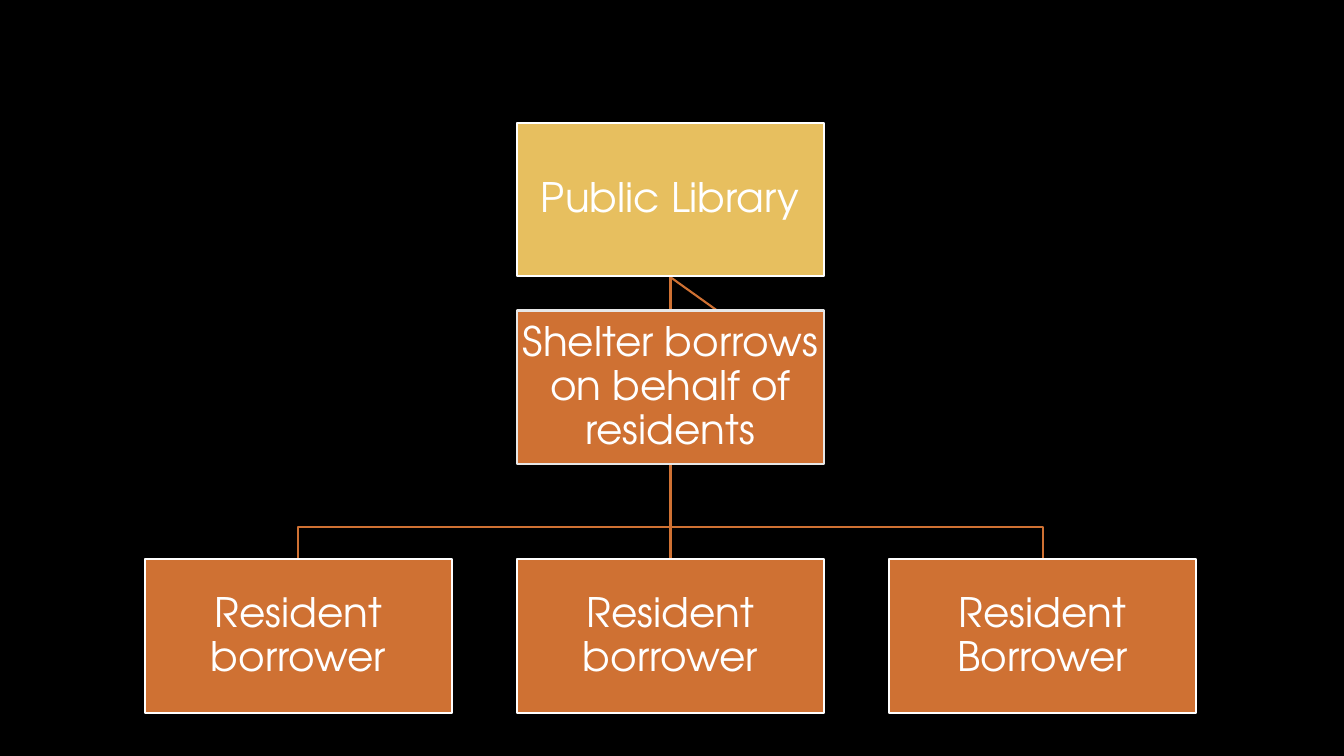
from lxml import etree
from pptx import Presentation
from pptx import util as u
from pptx.dml.color import RGBColor
from pptx.enum import shapes, text
from pptx.oxml.ns import qn

BLACK = RGBColor(0x00, 0x00, 0x00)
WHITE = RGBColor(0xFF, 0xFF, 0xFF)
PALE_GREY = RGBColor(0xE7, 0xE7, 0xE7)
GOLD = RGBColor(0xE7, 0xBF, 0x5F)
ORANGE = RGBColor(0xCF, 0x71, 0x33)

BOX_WIDTH, BOX_HEIGHT = 3.05, 1.52
CENTRE, COLUMN_STEP = 6.65, 3.69
LIBRARY_TOP, SHELTER_TOP, RESIDENT_TOP = 1.22, 3.08, 5.55
TRUNK_TOP, BRANCH_LEVEL = 2.75, 5.23


class LendingChart:
    """Draws the boxes and lines of an organisation chart on one slide."""

    font = "TeX Gyre Adventor"
    size = u.Pt(29)
    line_width = u.Pt(1.5)
    inset = u.Inches(0.02)

    def __init__(self, slide):
        self.slide = slide
        slide.background.fill.solid()
        slide.background.fill.fore_color.rgb = BLACK

    def outline(self, item, color):
        item.line.color.rgb = color
        item.line.width = self.line_width

    def straight(self, start, end):
        points = [u.Inches(value) for value in (*start, *end)]
        line = self.slide.shapes.add_connector(shapes.MSO_CONNECTOR.STRAIGHT, *points)
        self.outline(line, ORANGE)
        etree.SubElement(line._element.spPr, qn("a:effectLst"))

    def bent(self, *points):
        start, *rest = [(u.Inches(x), u.Inches(y)) for x, y in points]
        builder = self.slide.shapes.build_freeform(*start)
        builder.add_line_segments(rest, close=False)
        line = builder.convert_to_shape()
        line.fill.background()
        line.shadow.inherit = False
        self.outline(line, ORANGE)

    def box(self, label, centre, top, fill=ORANGE, border=WHITE):
        box = self.slide.shapes.add_shape(
            shapes.MSO_SHAPE.RECTANGLE,
            u.Inches(centre - BOX_WIDTH / 2), u.Inches(top),
            u.Inches(BOX_WIDTH), u.Inches(BOX_HEIGHT))
        box.shadow.inherit = False
        box.fill.solid()
        box.fill.fore_color.rgb = fill
        self.outline(box, border)
        frame = box.text_frame
        frame.word_wrap = True
        frame.vertical_anchor = text.MSO_ANCHOR.MIDDLE
        frame.margin_left = frame.margin_right = self.inset
        frame.margin_top = frame.margin_bottom = self.inset
        para = frame.paragraphs[0]
        para.text = label
        para.alignment = text.PP_ALIGN.CENTER
        para.line_spacing = 0.9
        para.font.name = self.font
        para.font.size = self.size
        para.font.color.rgb = WHITE


def main():
    deck = Presentation()
    deck.slide_width, deck.slide_height = u.Inches(13.33), u.Inches(7.5)
    chart = LendingChart(deck.slides.add_slide(deck.slide_layouts[6]))
    left, right = CENTRE - COLUMN_STEP, CENTRE + COLUMN_STEP
    trunk = (CENTRE, TRUNK_TOP)

    chart.straight(trunk, (CENTRE + BOX_WIDTH / 2, SHELTER_TOP + BOX_HEIGHT / 2))
    chart.straight(trunk, (CENTRE, RESIDENT_TOP))
    for column in (right, left):
        chart.bent(trunk, (CENTRE, BRANCH_LEVEL),
                   (column, BRANCH_LEVEL), (column, RESIDENT_TOP))

    chart.box("Public Library", CENTRE, LIBRARY_TOP, fill=GOLD)
    residents = ("Resident borrower", "Resident borrower", "Resident Borrower")
    for label, column in zip(residents, (left, CENTRE, right)):
        chart.box(label, column, RESIDENT_TOP)
    chart.box("Shelter borrows on behalf of residents", CENTRE, SHELTER_TOP,
              border=PALE_GREY)
    deck.save("out.pptx")


if __name__ == "__main__":
    main()
